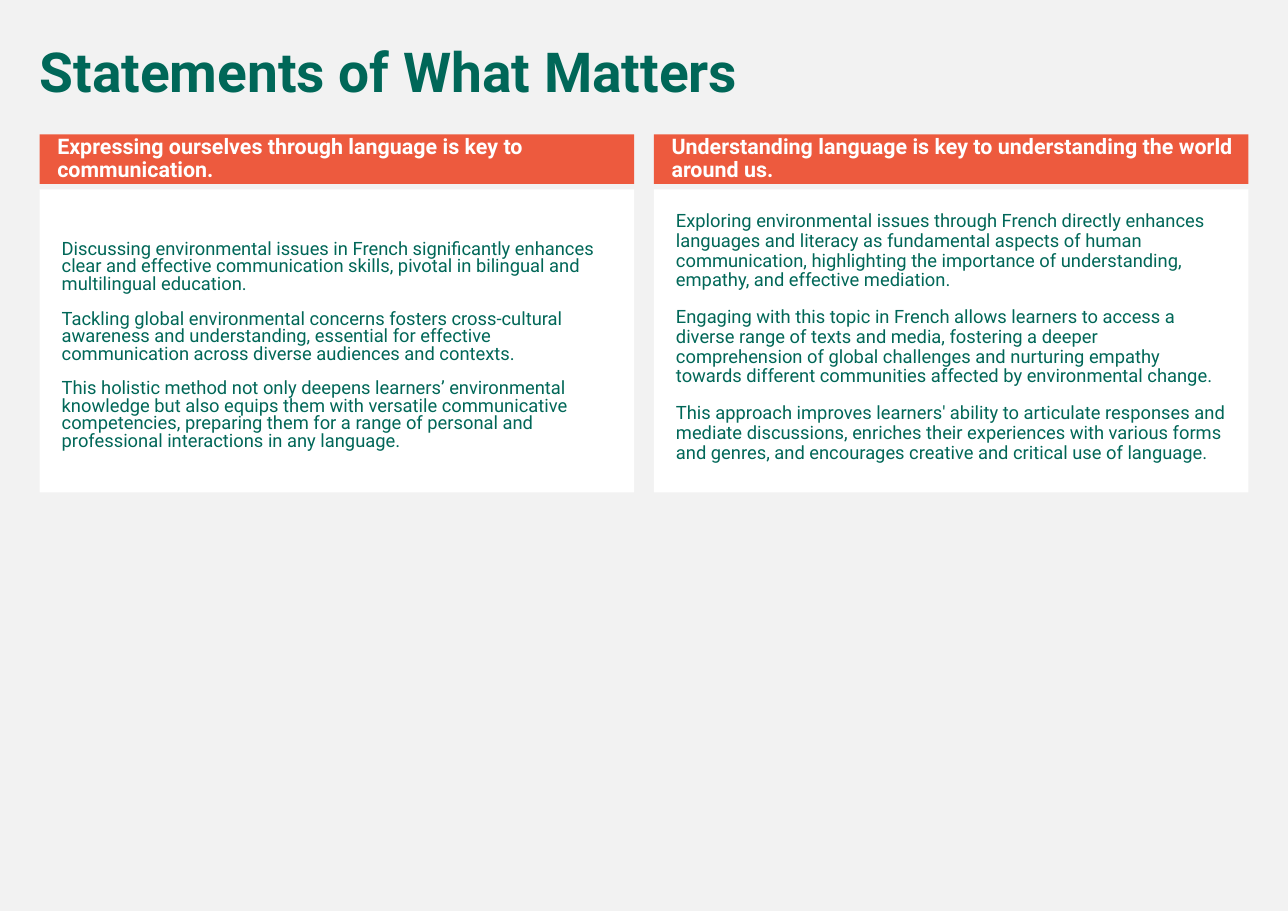
from pptx import Presentation
from pptx.dml.color import RGBColor
from pptx.enum.shapes import MSO_SHAPE
from pptx.enum.text import MSO_ANCHOR, MSO_AUTO_SIZE, PP_ALIGN
from pptx.util import Inches, Pt

RECT = MSO_SHAPE.RECTANGLE
TOP, MIDDLE = MSO_ANCHOR.TOP, MSO_ANCHOR.MIDDLE
LEFT = PP_ALIGN.LEFT
NO_FIT = MSO_AUTO_SIZE.NONE

GREEN = RGBColor(0x00, 0x67, 0x58)
ORANGE = RGBColor(0xED, 0x5A, 0x3E)
WHITE = RGBColor(0xFF, 0xFF, 0xFF)
GREY = RGBColor(0xF2, 0xF2, 0xF2)

# Page grid, in inches
PAGE_W, PAGE_H = 11.69, 8.27
MARGIN, GUTTER = 0.36, 0.18
COLUMNS_TOP, HEADER_H, HEADER_GAP, COLUMN_H = 1.22, 0.45, 0.05, 3.25

# Heading, paragraphs, line spacing and top inset of each column
STATEMENTS = [
    ("Expressing ourselves through language is key to communication.",
     ["Discussing environmental issues in French significantly enhances clear and "
      "effective communication skills, pivotal in bilingual and multilingual education.",
      "Tackling global environmental concerns fosters cross-cultural awareness and "
      "understanding, essential for effective communication across diverse audiences "
      "and contexts.",
      "This holistic method not only deepens learners’ environmental knowledge but "
      "also equips them with versatile communicative competencies, preparing them for "
      "a range of personal and professional interactions in any language."],
     0.8, 0.47),
    ("Understanding language is key to understanding the world around us.",
     ["Exploring environmental issues through French directly enhances languages and "
      "literacy as fundamental aspects of human communication, highlighting the "
      "importance of understanding, empathy, and effective mediation.",
      "Engaging with this topic in French allows learners to access a diverse range of "
      "texts and media, fostering a deeper comprehension of global challenges and "
      "nurturing empathy towards different communities affected by environmental change.",
      "This approach improves learners' ability to articulate responses and mediate "
      "discussions, enriches their experiences with various forms and genres, and "
      "encourages creative and critical use of language."],
     0.9, 0.2),
]


def write(tf, paragraphs, size, color, bold=False, spacing=0.9, anchor=TOP,
          insets=(0.1, 0.05, 0.1, 0.05)):
    tf.word_wrap = True
    tf.auto_size = NO_FIT
    tf.vertical_anchor = anchor
    tf.margin_left, tf.margin_top, tf.margin_right, tf.margin_bottom = map(Inches, insets)
    for i, text in enumerate(paragraphs):
        p = tf.add_paragraph() if i else tf.paragraphs[0]
        p.text = text
        p.alignment = LEFT
        p.line_spacing = spacing
        p.space_before = Pt(11)
        p.font.name = "Roboto"
        p.font.size = Pt(size)
        p.font.bold = bold
        p.font.color.rgb = color


def add_panel(s, x, y, w, h, fill):
    sp = s.shapes.add_shape(RECT, *map(Inches, (x, y, w, h)))
    sp.shadow.inherit = False
    sp.fill.solid()
    sp.fill.fore_color.rgb = fill
    sp.line.fill.background()
    return sp.text_frame


def add_title(s, x, y, w, h, text):
    title = s.shapes.title
    title.left, title.top, title.width, title.height = map(Inches, (x, y, w, h))
    write(title.text_frame, [text], 36, GREEN, bold=True)


def add_statement(s, x, y, w, h, heading, paragraphs, spacing, top_inset):
    # Heading band
    tf = add_panel(s, x, y, w, HEADER_H, ORANGE)
    write(tf, [heading], 14, WHITE, bold=True, anchor=MIDDLE,
          insets=(0.16, 0.05, 0.1, 0.05))
    # Body panel
    body_top = HEADER_H + HEADER_GAP
    tf = add_panel(s, x, y + body_top, w, h - body_top, WHITE)
    write(tf, paragraphs, 12, GREEN, spacing=spacing,
          insets=(0.2, top_inset, 0.2, 0.2))


def main():
    prs = Presentation()
    prs.slide_width, prs.slide_height = Inches(PAGE_W), Inches(PAGE_H)
    s = prs.slides.add_slide(prs.slide_layouts[5])
    s.background.fill.solid()
    s.background.fill.fore_color.rgb = GREY

    # The title's inset lines its text up with the columns
    add_title(s, MARGIN - 0.1, 0.36, PAGE_W - 2 * MARGIN + 0.1, 0.65,
              "Statements of What Matters")

    # Two equal columns
    column_w = (PAGE_W - 2 * MARGIN - GUTTER) / 2
    for i, statement in enumerate(STATEMENTS):
        add_statement(s, MARGIN + i * (column_w + GUTTER), COLUMNS_TOP,
                      column_w, COLUMN_H, *statement)
    prs.save("out.pptx")


if __name__ == "__main__":
    main()
